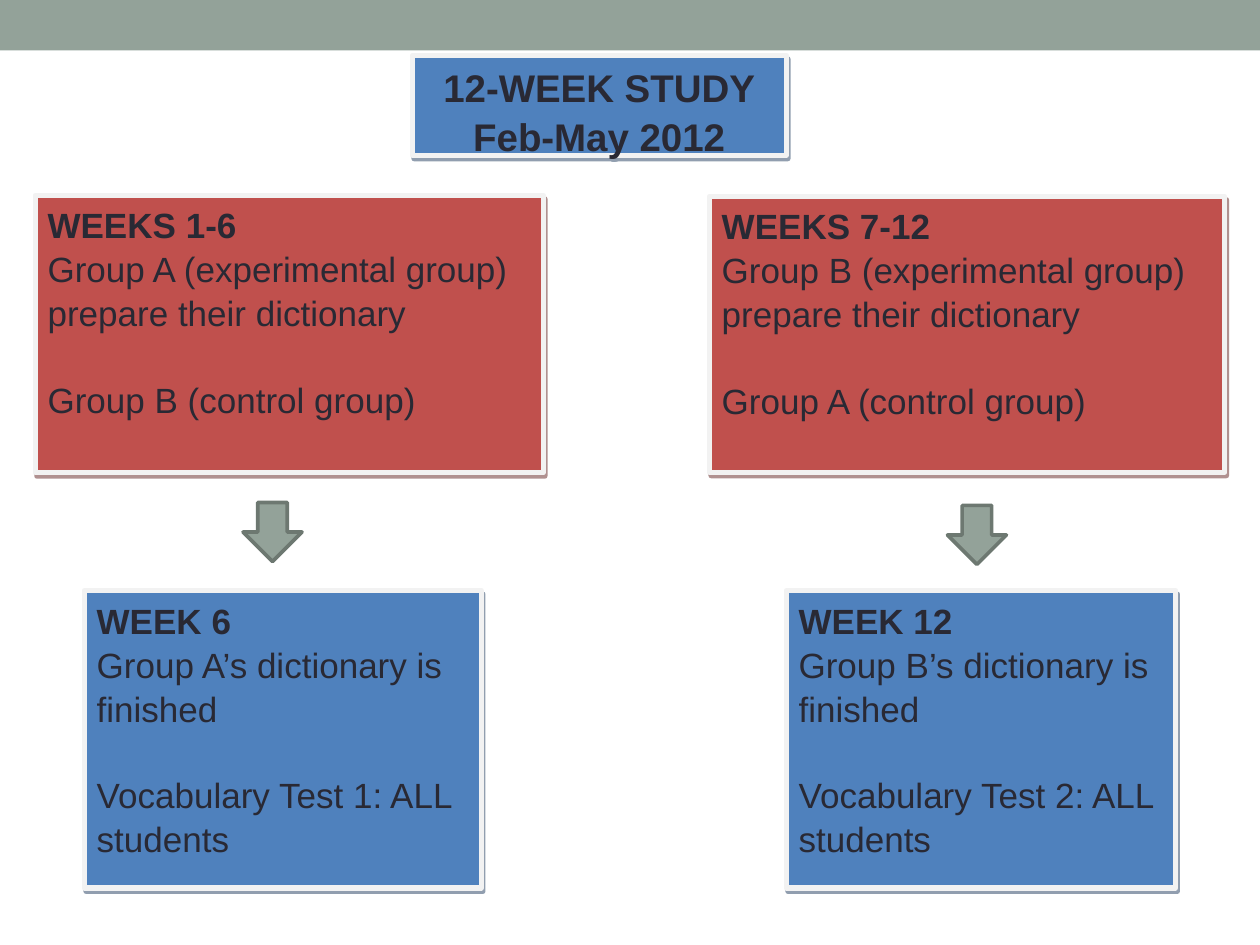
from collections import namedtuple

from lxml import etree
from pptx import Presentation
from pptx.dml.color import RGBColor
from pptx.enum.shapes import MSO_SHAPE
from pptx.enum.text import MSO_ANCHOR, MSO_AUTO_SIZE, PP_ALIGN
from pptx.oxml.ns import qn
from pptx.util import Cm, Pt

RECTANGLE = MSO_SHAPE.RECTANGLE
PROCESS = MSO_SHAPE.FLOWCHART_PROCESS
DOWN_ARROW = MSO_SHAPE.DOWN_ARROW
TOP = MSO_ANCHOR.TOP
NO_AUTOFIT = MSO_AUTO_SIZE.NONE
LEFT, CENTER = PP_ALIGN.LEFT, PP_ALIGN.CENTER

SAGE = RGBColor(0x93, 0xA2, 0x99)
DARK_SAGE = RGBColor(0x6D, 0x78, 0x71)
BLUE = RGBColor(0x4F, 0x81, 0xBD)
RED = RGBColor(0xC0, 0x50, 0x4D)
PALE = RGBColor(0xF2, 0xF2, 0xF2)
INK = RGBColor(0x29, 0x29, 0x34)
SHADOWS = {BLUE: RGBColor(0x24, 0x3F, 0x60), RED: RGBColor(0x62, 0x24, 0x23)}

FONT = "Arial"
LINE_SPACING = 1.05
BLANK_LINE = 24
ARROW_SIZE = 1.19

# All lengths are in centimetres
Box = namedtuple("Box", "left top width height")


def place(shape, box):
    shape.left, shape.top, shape.width, shape.height = map(Cm, box)


def add_shape(page, kind, box):
    shape = page.shapes.add_shape(kind, *map(Cm, box))
    shape.shadow.inherit = False
    return shape


def paint(shape, fill, line=None, width=0):
    shape.fill.solid()
    shape.fill.fore_color.rgb = fill
    if line is None:
        shape.line.fill.background()
    else:
        shape.line.color.rgb = line
        shape.line.width = Pt(width)


def cast_shadow(shape, color):
    """Give the shape a hard, half-transparent shadow to the lower right."""
    shape.shadow.inherit = False
    effects = shape._element.spPr.find(qn("a:effectLst"))
    shadow = etree.SubElement(effects, qn("a:outerShdw"), blurRad="0",
                              dist=str(Pt(2.2)), dir=str(63 * 60000),
                              algn="ctr", rotWithShape="0")
    tint = etree.SubElement(shadow, qn("a:srgbClr"), val=str(color))
    etree.SubElement(tint, qn("a:alpha"), val="50000")


def write(para, text, size=20, bold=False, align=LEFT, before=0):
    para.alignment = align
    para.line_spacing = LINE_SPACING
    para.space_before = Pt(before)
    span = para.add_run()
    span.text = text
    span.font.name = FONT
    span.font.size = Pt(size)
    span.font.bold = bold
    span.font.color.rgb = INK


def style_card(shape, fill):
    """Paint a framed card and return its text frame."""
    paint(shape, fill, PALE, 3)
    cast_shadow(shape, SHADOWS[fill])
    frame = shape.text_frame
    frame.word_wrap = True
    frame.auto_size = NO_AUTOFIT
    frame.vertical_anchor = TOP
    return frame


def add_title(page, box, lines):
    title = page.shapes.title
    place(title, box)
    frame = style_card(title, BLUE)
    for index, text in enumerate(lines):
        para = frame.add_paragraph() if index else frame.paragraphs[0]
        write(para, text, size=22, bold=True, align=CENTER)


def add_card(page, box, fill, heading, first, second):
    frame = style_card(add_shape(page, PROCESS, box), fill)
    write(frame.paragraphs[0], heading, bold=True)
    write(frame.add_paragraph(), first)
    write(frame.add_paragraph(), second, before=BLANK_LINE)


def add_phase(page, box, task, result, task_height, arrow_offset, result_box):
    """Stack a task card, an arrow and a result card; offsets are from box."""
    add_card(page, box._replace(height=task_height), RED, *task)
    result_left, result_width, result_height = result_box
    add_card(page, Box(box.left + result_left,
                       box.top + box.height - result_height,
                       result_width, result_height), BLUE, *result)
    across, down = arrow_offset
    arrow = add_shape(page, DOWN_ARROW, Box(box.left + across, box.top + down,
                                            ARROW_SIZE, ARROW_SIZE))
    paint(arrow, SAGE, DARK_SAGE, 2.08)


def main():
    deck = Presentation()
    deck.slide_width, deck.slide_height = Cm(25.4), Cm(19.05)
    page = deck.slides.add_slide(deck.slide_layouts.get_by_name("Title Only"))
    paint(add_shape(page, RECTANGLE, Box(0, 0, 25.4, 1.02)), SAGE)
    add_title(page, Box(8.31, 1.12, 7.54, 2.01),
              ["12-WEEK STUDY", "Feb-May 2012"])
    add_phase(page, Box(0.71, 3.94, 10.24, 13.96),
              ("WEEKS 1-6",
               "Group A (experimental group) prepare their dictionary",
               "Group B (control group)"),
              ("WEEK 6", "Group A’s dictionary is finished",
               "Vocabulary Test 1: ALL students"),
              task_height=5.59, arrow_offset=(4.19, 6.19),
              result_box=(0.99, 8, 5.99))
    add_phase(page, Box(14.3, 3.96, 10.39, 13.94),
              ("WEEKS 7-12",
               "Group B (experimental group) prepare their dictionary",
               "Group A (control group)"),
              ("WEEK 12", "Group B’s dictionary is finished",
               "Vocabulary Test 2: ALL students"),
              task_height=5.56, arrow_offset=(4.8, 6.23),
              result_box=(1.55, 7.85, 5.99))
    deck.save("out.pptx")


if __name__ == "__main__":
    main()
